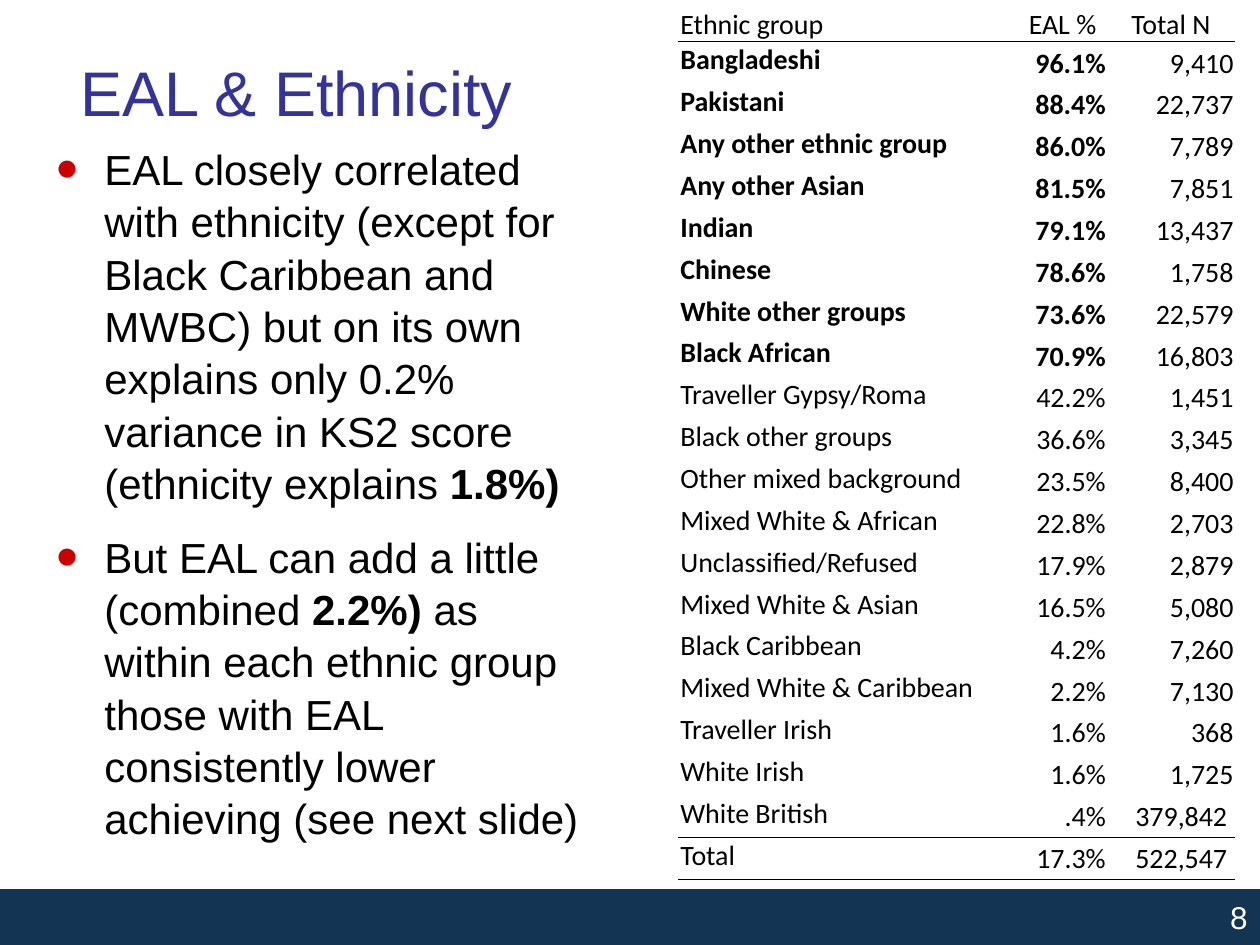
from typing import NamedTuple

from lxml.etree import SubElement
from pptx import Presentation
from pptx.dml.color import RGBColor
from pptx.enum.shapes import MSO_SHAPE
from pptx.enum.text import MSO_ANCHOR, PP_ALIGN
from pptx.oxml.ns import qn
from pptx.util import Inches, Pt

SLIDE_WIDTH, SLIDE_HEIGHT = Inches(10), Inches(7.5)
BLACK, WHITE = "000000", "FFFFFF"
TITLE_BLUE, BAND_BLUE, BULLET_RED = "333399", "133452", "CC0000"
COLUMN_SHARES = (0.61, 0.16, 0.23)
HEADINGS = ("Ethnic group", "EAL %", "Total N")


class Area(NamedTuple):
    left: float
    top: float
    width: float
    height: float

    def lengths(self) -> tuple:
        return (int(self.left * SLIDE_WIDTH), int(self.top * SLIDE_HEIGHT),
                int(self.width * SLIDE_WIDTH), int(self.height * SLIDE_HEIGHT))


class Group(NamedTuple):
    name: str
    share: str
    total: str
    bold: bool = False
    inset: float = 0.01


class Span(NamedTuple):
    text: str
    bold: bool = False


GROUPS = (
    Group("Bangladeshi", "96.1%", "9,410", True),
    Group("Pakistani", "88.4%", "22,737", True),
    Group("Any other ethnic group", "86.0%", "7,789", True),
    Group("Any other Asian", "81.5%", "7,851", True),
    Group("Indian", "79.1%", "13,437", True),
    Group("Chinese", "78.6%", "1,758", True),
    Group("White other groups", "73.6%", "22,579", True),
    Group("Black African", "70.9%", "16,803", True),
    Group("Traveller Gypsy/Roma", "42.2%", "1,451"),
    Group("Black other groups", "36.6%", "3,345"),
    Group("Other mixed background", "23.5%", "8,400"),
    Group("Mixed White & African", "22.8%", "2,703"),
    Group("Unclassified/Refused", "17.9%", "2,879"),
    Group("Mixed White & Asian", "16.5%", "5,080"),
    Group("Black Caribbean", "4.2%", "7,260"),
    Group("Mixed White & Caribbean", "2.2%", "7,130"),
    Group("Traveller Irish", "1.6%", "368"),
    Group("White Irish", "1.6%", "1,725"),
    Group("White British", ".4%", "379,842", inset=0.06),
    Group("Total", "17.3%", "522,547", inset=0.06),
)

POINTS = (
    (Span("EAL closely correlated with ethnicity (except for Black Caribbean and MWBC) "
          "but on its own explains only 0.2% variance in KS2 score (ethnicity explains "),
     Span("1.8%)", True)),
    (Span("But EAL can add a little (combined "),
     Span("2.2%) ", True),
     Span("as within each ethnic group those with EAL consistently lower achieving "
          "(see next slide)")),
)


def color(value: str) -> RGBColor:
    return RGBColor.from_string(value)


def style(para, size: float, fill: str, name: str = "Arial", align=PP_ALIGN.LEFT) -> None:
    para.alignment = align
    para.font.size = Pt(size)
    para.font.name = name
    para.font.color.rgb = color(fill)


def add_title(page, area: Area, text: str) -> None:
    frame = page.shapes.add_textbox(*area.lengths()).text_frame
    frame.word_wrap = True
    frame.vertical_anchor = MSO_ANCHOR.MIDDLE
    para = frame.paragraphs[0]
    para.text = text
    style(para, 36, TITLE_BLUE, align=PP_ALIGN.CENTER)


def add_box(page, area: Area, fill: str):
    box = page.shapes.add_shape(MSO_SHAPE.RECTANGLE, *area.lengths())
    box.shadow.inherit = False
    box.fill.solid()
    box.fill.fore_color.rgb = color(fill)
    box.line.fill.background()
    box.text_frame.word_wrap = True
    return box


def add_bullet(para) -> None:
    properties = para._p.get_or_add_pPr()
    properties.set("marL", str(Inches(0.38)))
    properties.set("indent", str(-Inches(0.38)))
    bullet_color = SubElement(properties, qn("a:buClr"))
    SubElement(bullet_color, qn("a:srgbClr"), val=BULLET_RED)
    SubElement(properties, qn("a:buSzPct"), val="150000")
    SubElement(properties, qn("a:buFont"), typeface="Arial")
    SubElement(properties, qn("a:buChar"), char="•")


def add_points(page, area: Area) -> None:
    frame = add_box(page, area, WHITE).text_frame
    frame.vertical_anchor = MSO_ANCHOR.TOP
    for index, spans in enumerate(POINTS):
        para = frame.add_paragraph() if index else frame.paragraphs[0]
        add_bullet(para)
        style(para, 24, BLACK)
        para.line_spacing = 1.04
        para.space_before = Pt(6 if index else 0)
        para.space_after = Pt(6)
        for span in spans:
            run = para.add_run()
            run.text = span.text
            run.font.bold = span.bold


def add_rule(cell, side: str) -> None:
    line = SubElement(cell._tc.get_or_add_tcPr(), qn(f"a:{side}"), w=str(Pt(0.5)))
    fill = SubElement(line, qn("a:solidFill"))
    SubElement(fill, qn("a:srgbClr"), val=BLACK)


def fill_cell(cell, text: str, align, anchor, bold: bool, inset: float = 0.01) -> None:
    cell.fill.background()
    cell.margin_left = cell.margin_top = Inches(0.01)
    cell.margin_right, cell.margin_bottom = Inches(inset), 0
    cell.vertical_anchor = anchor
    para = cell.text_frame.paragraphs[0]
    para.text = text
    style(para, 16, BLACK, "Calibri", align)
    para.font.bold = bold


def add_group_table(page, area: Area) -> None:
    count = len(GROUPS) + 1
    table = page.shapes.add_table(count, len(HEADINGS), *area.lengths()).table
    table.first_row = table.horz_banding = False
    _, _, width, height = area.lengths()
    for column, share in zip(table.columns, COLUMN_SHARES):
        column.width = int(width * share)
    for row in table.rows:
        row.height = height // count

    ruled_below = (0, count - 2, count - 1)
    for index in range(count):
        for cell in table.rows[index].cells:
            if index - 1 in ruled_below:
                add_rule(cell, "lnT")
            if index in ruled_below:
                add_rule(cell, "lnB")

    for column, heading in enumerate(HEADINGS):
        align = PP_ALIGN.CENTER if column else PP_ALIGN.LEFT
        fill_cell(table.cell(0, column), heading, align, MSO_ANCHOR.BOTTOM, False)
    for row, group in enumerate(GROUPS, start=1):
        fill_cell(table.cell(row, 0), group.name, PP_ALIGN.LEFT, MSO_ANCHOR.TOP, group.bold)
        fill_cell(table.cell(row, 1), group.share, PP_ALIGN.RIGHT, MSO_ANCHOR.MIDDLE, group.bold)
        fill_cell(table.cell(row, 2), group.total, PP_ALIGN.RIGHT, MSO_ANCHOR.MIDDLE, False,
                  group.inset)


def add_footer(page, area: Area, number: str) -> None:
    frame = add_box(page, area, BAND_BLUE).text_frame
    frame.vertical_anchor = MSO_ANCHOR.MIDDLE
    para = frame.paragraphs[0]
    para.text = number
    style(para, 18, WHITE, align=PP_ALIGN.RIGHT)


def main() -> None:
    deck = Presentation()
    deck.slide_width, deck.slide_height = SLIDE_WIDTH, SLIDE_HEIGHT
    page = deck.slides.add_slide(deck.slide_layouts[6])
    add_footer(page, Area(0, 0.941, 1, 0.059), "8")
    add_points(page, Area(0.035, 0.143, 0.441, 0.777))
    add_title(page, Area(0.05, 0.04, 0.371, 0.113), "EAL & Ethnicity")
    add_group_table(page, Area(0.539, 0, 0.441, 0.931))
    deck.save("out.pptx")


if __name__ == "__main__":
    main()
